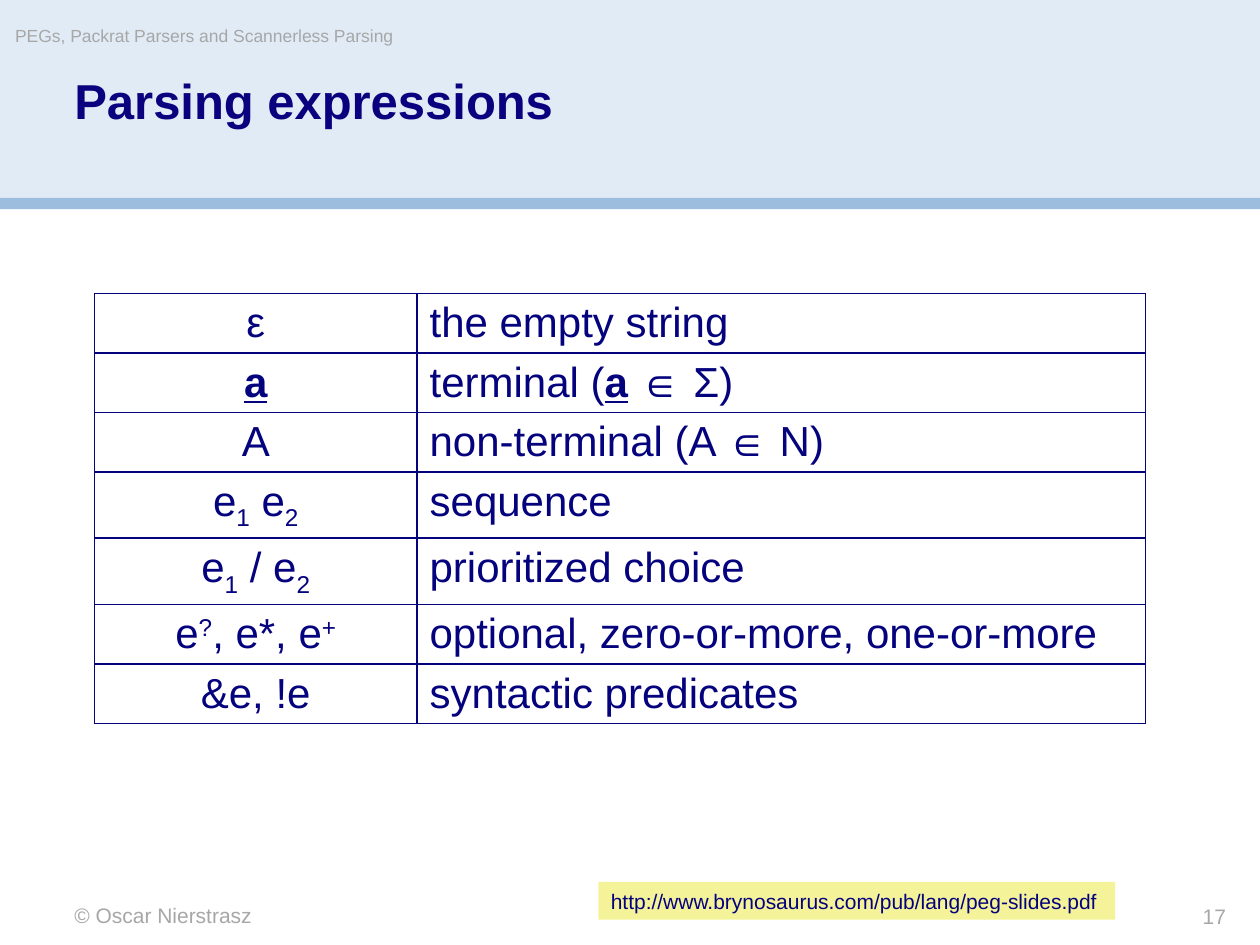
"""Build the slide that lists the parsing expression operators."""
from dataclasses import dataclass, field
from typing import Any

from pptx import Presentation
from pptx.dml.color import RGBColor
from pptx.enum.shapes import MSO_SHAPE as Preset
from pptx.enum.text import MSO_ANCHOR as Anchor, MSO_AUTO_SIZE as AutoSize, PP_ALIGN as Align
from pptx.oxml import parse_xml
from pptx.oxml.ns import nsdecls
from pptx.util import Inches, Pt


@dataclass(frozen=True)
class Theme:
    font: str = "Arial"
    title: str = "0A017F"
    ink: str = "05027D"
    muted: str = "A7A7A7"
    band: str = "E1EBF5"
    rule: str = "9CBDDE"
    note: str = "F5F399"
    title_size: int = 28
    table_size: int = 24
    footer_size: int = 12
    header_size: int = 10


@dataclass(frozen=True)
class Segment:
    text: str
    format: dict[str, Any] = field(default_factory=dict)
    baseline: int = 0


@dataclass(frozen=True)
class Block:
    left: float
    top: float
    width: float
    height: float
    fill: str


@dataclass(frozen=True)
class Label:
    text: str
    left: float
    top: float
    width: float
    height: float
    size: int
    wrap: bool = True
    align: Align = Align.LEFT


THEME = Theme()


def terminal(text: str) -> Segment:
    return Segment(text, {"bold": True, "underline": True})


def subscript(text: str) -> Segment:
    return Segment(text, baseline=-25000)


def superscript(text: str) -> Segment:
    return Segment(text, baseline=30000)


def pair(joint: str) -> list[Segment]:
    return [Segment("e"), subscript("1"), Segment(f"{joint}e"), subscript("2")]


BLOCKS = [Block(0, 0, 10, 1.58, THEME.band), Block(0, 1.57, 10, 0.09, THEME.rule)]
NOTE = Block(4.75, 7, 4.1, 0.3, THEME.note)
LABELS = [
    Label("© Oscar Nierstrasz", 0.59, 7.16, 4.17, 0.2, THEME.footer_size),
    Label("PEGs, Packrat Parsers and Scannerless Parsing", 0.12, 0.2, 5.9, 0.28,
          THEME.header_size, wrap=False),
    Label("17", 8.25, 7.17, 1.48, 0.2, THEME.footer_size, align=Align.RIGHT),
]
EXPRESSIONS = [
    ([Segment("ε")], [Segment("the empty string")]),
    ([terminal("a")], [Segment("terminal ("), terminal("a"), Segment(" ∈ Σ)")]),
    ([Segment("A")], [Segment("non-terminal (A ∈ N)")]),
    (pair(" "), [Segment("sequence")]),
    (pair(" / "), [Segment("prioritized choice")]),
    ([Segment("e"), superscript("?"), Segment(", e*, e"), superscript("+")],
     [Segment("optional, zero-or-more, one-or-more")]),
    ([Segment("&e, !e")], [Segment("syntactic predicates")]),
]
COLUMN_WIDTHS = (2.56, 5.78)
ROW_HEIGHT = 0.41
NO_MARGINS = dict.fromkeys(("margin_left", "margin_top", "margin_right", "margin_bottom"), 0)


def apply(target: Any, formats: dict[str, Any]) -> None:
    for name, value in formats.items():
        setattr(target, name, value)


def box(item: Block | Label) -> tuple[int, ...]:
    return tuple(Inches(value) for value in (item.left, item.top, item.width, item.height))


def write(frame: Any, segments: list[Segment], size: int, color: str,
          align: Align = Align.LEFT) -> None:
    paragraph = frame.paragraphs[0]
    paragraph.alignment = align
    for segment in segments:
        run = paragraph.add_run()
        run.text = segment.text
        base = {"name": THEME.font, "size": Pt(size), "bold": False}
        apply(run.font, base | segment.format)
        run.font.color.rgb = RGBColor.from_string(color)
        if segment.baseline:
            run._r.get_or_add_rPr().set("baseline", str(segment.baseline))


def add_block(slide: Any, block: Block) -> Any:
    shape = slide.shapes.add_shape(Preset.RECTANGLE, *box(block))
    shape.shadow.inherit = False
    shape.fill.solid()
    shape.fill.fore_color.rgb = RGBColor.from_string(block.fill)
    shape.line.fill.background()
    return shape


def add_label(slide: Any, label: Label) -> None:
    frame = slide.shapes.add_textbox(*box(label)).text_frame
    apply(frame, NO_MARGINS | {"word_wrap": label.wrap})
    write(frame, [Segment(label.text)], label.size, THEME.muted, label.align)


def add_title(slide: Any, text: str) -> None:
    title = slide.shapes.title
    slide.shapes._spTree.append(title._element)
    apply(title, {"left": Inches(0.59), "top": Inches(0.61),
                  "width": Inches(8.83), "height": Inches(0.89)})
    frame = title.text_frame
    apply(frame, NO_MARGINS | {"vertical_anchor": Anchor.TOP, "auto_size": AutoSize.NONE})
    write(frame, [Segment(text, {"bold": True})], THEME.title_size, THEME.title)
    frame.paragraphs[0].line_spacing = 0.9


def add_borders(cell: Any) -> None:
    properties = cell._tc.get_or_add_tcPr()
    for position, side in enumerate(("lnL", "lnR", "lnT", "lnB")):
        properties.insert(position, parse_xml(
            f'<a:{side} {nsdecls("a")} w="{Pt(1)}"><a:solidFill>'
            f'<a:srgbClr val="{THEME.ink}"/></a:solidFill></a:{side}>'))


def add_expression_table(slide: Any) -> None:
    table = slide.shapes.add_table(
        len(EXPRESSIONS), len(COLUMN_WIDTHS), Inches(0.75), Inches(2.33),
        Inches(sum(COLUMN_WIDTHS)), Inches(ROW_HEIGHT * len(EXPRESSIONS))).table
    apply(table, {"first_row": False, "horz_banding": False})
    for column, width in zip(table.columns, COLUMN_WIDTHS):
        column.width = Inches(width)
    for row, expression in zip(table.rows, EXPRESSIONS):
        row.height = Inches(ROW_HEIGHT)
        for cell, segments, align in zip(row.cells, expression, (Align.CENTER, Align.LEFT)):
            cell.fill.background()
            add_borders(cell)
            write(cell.text_frame, segments, THEME.table_size, THEME.ink, align)


def add_note(slide: Any, text: str) -> None:
    frame = add_block(slide, NOTE).text_frame
    apply(frame, {"word_wrap": False, "auto_size": AutoSize.SHAPE_TO_FIT_TEXT,
                  "vertical_anchor": Anchor.TOP})
    write(frame, [Segment(text)], THEME.footer_size, THEME.ink)


def main() -> None:
    presentation = Presentation()
    apply(presentation, {"slide_width": Inches(10), "slide_height": Inches(7.5)})
    slide = presentation.slides.add_slide(presentation.slide_layouts[5])
    for block in BLOCKS:
        add_block(slide, block)
    add_title(slide, "Parsing expressions")
    add_expression_table(slide)
    for label in LABELS:
        add_label(slide, label)
    add_note(slide, "http://www.brynosaurus.com/pub/lang/peg-slides.pdf")
    presentation.save("out.pptx")


if __name__ == "__main__":
    main()
